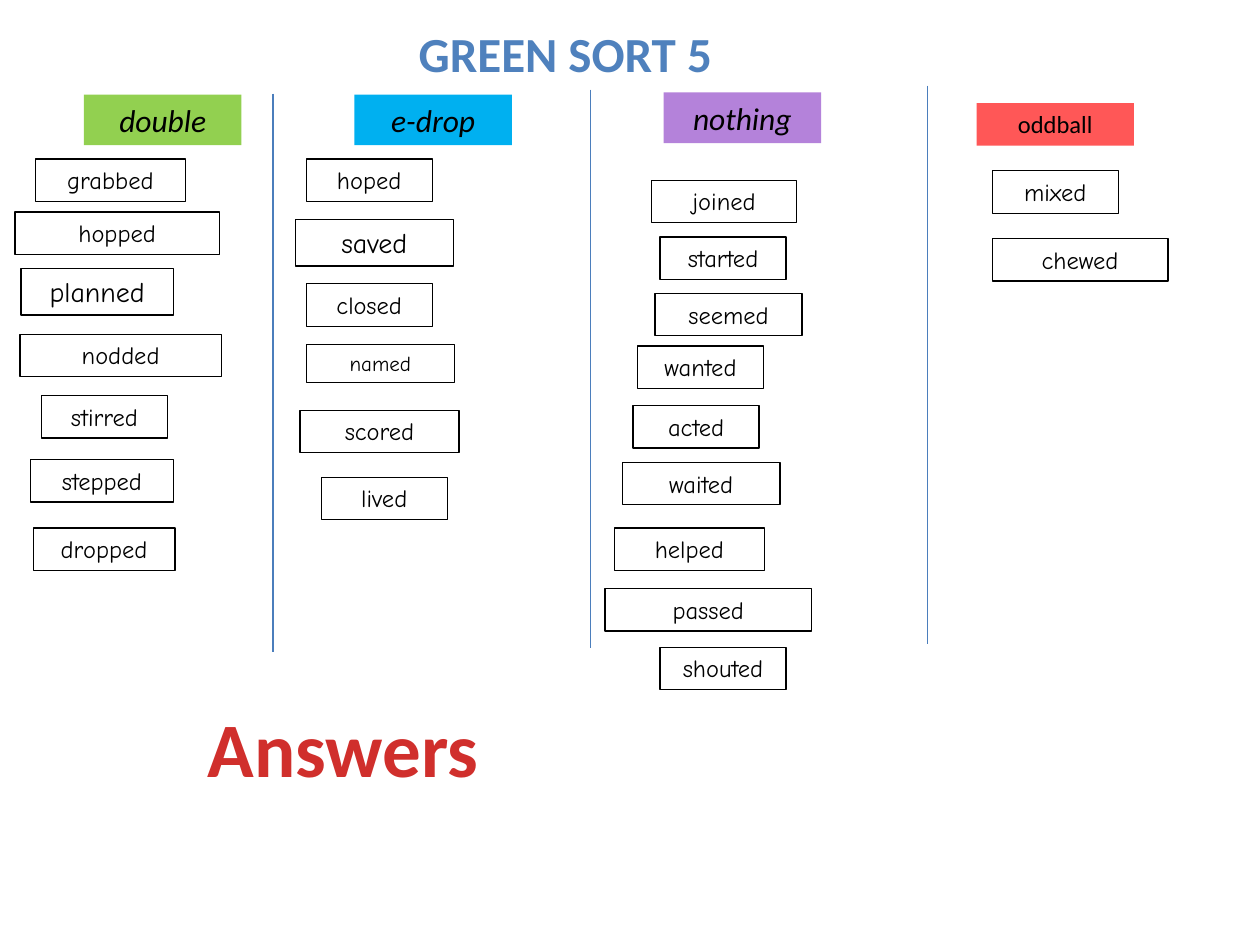
from lxml.etree import SubElement
from pptx import Presentation
from pptx.dml.color import RGBColor
from pptx.enum.shapes import MSO_CONNECTOR, MSO_SHAPE
from pptx.enum.text import MSO_ANCHOR, MSO_AUTO_SIZE, PP_ALIGN
from pptx.oxml.ns import qn
from pptx.util import Pt

BLACK = RGBColor(0x00, 0x00, 0x00)
GREEN = RGBColor(0x92, 0xD0, 0x50)
BLUE = RGBColor(0x00, 0xB0, 0xF0)
PURPLE = RGBColor(0xB4, 0x82, 0xDA)
CORAL = RGBColor(0xFF, 0x57, 0x57)
TITLE_BLUE = RGBColor(0x4F, 0x81, 0xBD)
LINE_BLUE = RGBColor(0x4B, 0x7E, 0xBC)
ANSWER_RED = RGBColor(0xD0, 0x2F, 0x2C)

HEADING_FONT = "Calibri"
WORD_FONT = "Comic Neue"
WORD_SIZE = 14
BOX_HEIGHTS = {12: 21.8, 14: 24.3, 16: 26.7, 18: 29}  # by font size
DIVIDER_HEIGHT = 319

# text, left, top, font size, italic, fill
HEADINGS = [
    ("double", 48, 54, 18, True, GREEN),
    ("e-drop", 202.5, 54, 18, True, BLUE),
    ("nothing", 379.2, 52.8, 18, True, PURPLE),
    ("oddball", 558, 59, 14, False, CORAL),
]
HEADING_WIDTH = 90

# left, top
DIVIDERS = [(156, 53.5), (337.5, 51.3), (530, 49)]

# word, left, top, width and, where it differs from WORD_SIZE, font size
WORDS = {
    "double": [
        ("grabbed", 20.2, 90.8, 85.8),
        ("hopped", 8.6, 121.2, 116.8),
        ("planned", 12, 153.3, 87.2, 16),
        ("nodded", 11.4, 191, 115.2),
        ("stirred", 23.7, 226, 72),
        ("stepped", 17.4, 262.6, 81.8),
        ("dropped", 19, 301.7, 81),
    ],
    "e-drop": [
        ("hoped", 175, 90.8, 72),
        ("saved", 168.8, 125.4, 90.3, 16),
        ("closed", 175, 162.2, 72),
        ("named", 175, 196.8, 84.7, 12),
        ("scored", 171.4, 234.4, 91),
        ("lived", 183.6, 272.7, 72),
    ],
    "nothing": [
        ("joined", 372.3, 103, 83),
        ("started", 377.2, 135.4, 72),
        ("seemed", 374.3, 167.6, 84.1),
        ("wanted", 364.3, 197.7, 72),
        ("acted", 361.8, 231.8, 72),
        ("waited", 355.6, 264.2, 90.2),
        ("helped", 351.1, 301.7, 85.7),
        ("passed", 345.7, 336.3, 118),
        ("shouted", 377.2, 369.8, 72),
    ],
    "oddball": [
        ("mixed", 567, 97.6, 72),
        ("chewed", 567, 136.3, 100.4),
    ],
}


def write_text(shape, text, **font_format):
    frame = shape.text_frame
    frame.text = text
    frame_format = {
        "word_wrap": True,
        "auto_size": MSO_AUTO_SIZE.SHAPE_TO_FIT_TEXT,
        "vertical_anchor": MSO_ANCHOR.TOP,
    }
    for name, value in frame_format.items():
        setattr(frame, name, value)
    paragraph = frame.paragraphs[0]
    paragraph.alignment = PP_ALIGN.CENTER
    color = font_format.pop("color", BLACK)
    for name, value in font_format.items():
        setattr(paragraph.font, name, value)
    paragraph.font.color.rgb = color


def add_box(slide, left, top, width, size):
    shape = slide.shapes.add_shape(
        MSO_SHAPE.RECTANGLE, Pt(left), Pt(top), Pt(width), Pt(BOX_HEIGHTS[size])
    )
    shape.shadow.inherit = False
    return shape


def add_heading(slide, text, left, top, size, italic, fill):
    shape = add_box(slide, left, top, HEADING_WIDTH, size)
    shape.fill.solid()
    shape.fill.fore_color.rgb = fill
    shape.line.fill.background()
    write_text(shape, text, name=HEADING_FONT, size=Pt(size), italic=italic)


def add_word(slide, word, left, top, width, size=WORD_SIZE):
    shape = add_box(slide, left, top, width, size)
    shape.fill.background()
    shape.line.color.rgb = BLACK
    shape.line.width = Pt(0.75)
    write_text(shape, word, name=WORD_FONT, size=Pt(size))


def add_divider(slide, left, top):
    line = slide.shapes.add_connector(
        MSO_CONNECTOR.STRAIGHT, Pt(left), Pt(top), Pt(left), Pt(top + DIVIDER_HEIGHT)
    )
    line.line.color.rgb = LINE_BLUE
    line.line.width = Pt(0.75)
    SubElement(line.element.spPr, qn("a:effectLst"))


def add_title(slide):
    title = slide.shapes.title
    position = {"left": 157, "top": 10, "width": 332, "height": 41}
    for name, value in position.items():
        setattr(title, name, Pt(value))
    write_text(title, "GREEN SORT 5", name=HEADING_FONT, size=Pt(28), bold=True,
               color=TITLE_BLUE)


def add_answers_label(slide):
    label = slide.shapes.add_textbox(Pt(86.4), Pt(396.7), Pt(219.6), Pt(60.5))
    write_text(label, "Answers", name=HEADING_FONT, size=Pt(44), bold=True,
               color=ANSWER_RED)


def main():
    presentation = Presentation()
    presentation.slide_width = Pt(720)
    presentation.slide_height = Pt(540)
    slide = presentation.slides.add_slide(presentation.slide_layouts[5])
    add_title(slide)
    for heading in HEADINGS:
        add_heading(slide, *heading)
    for divider in DIVIDERS:
        add_divider(slide, *divider)
    for column in WORDS.values():
        for word in column:
            add_word(slide, *word)
    add_answers_label(slide)
    presentation.save("out.pptx")


if __name__ == "__main__":
    main()
